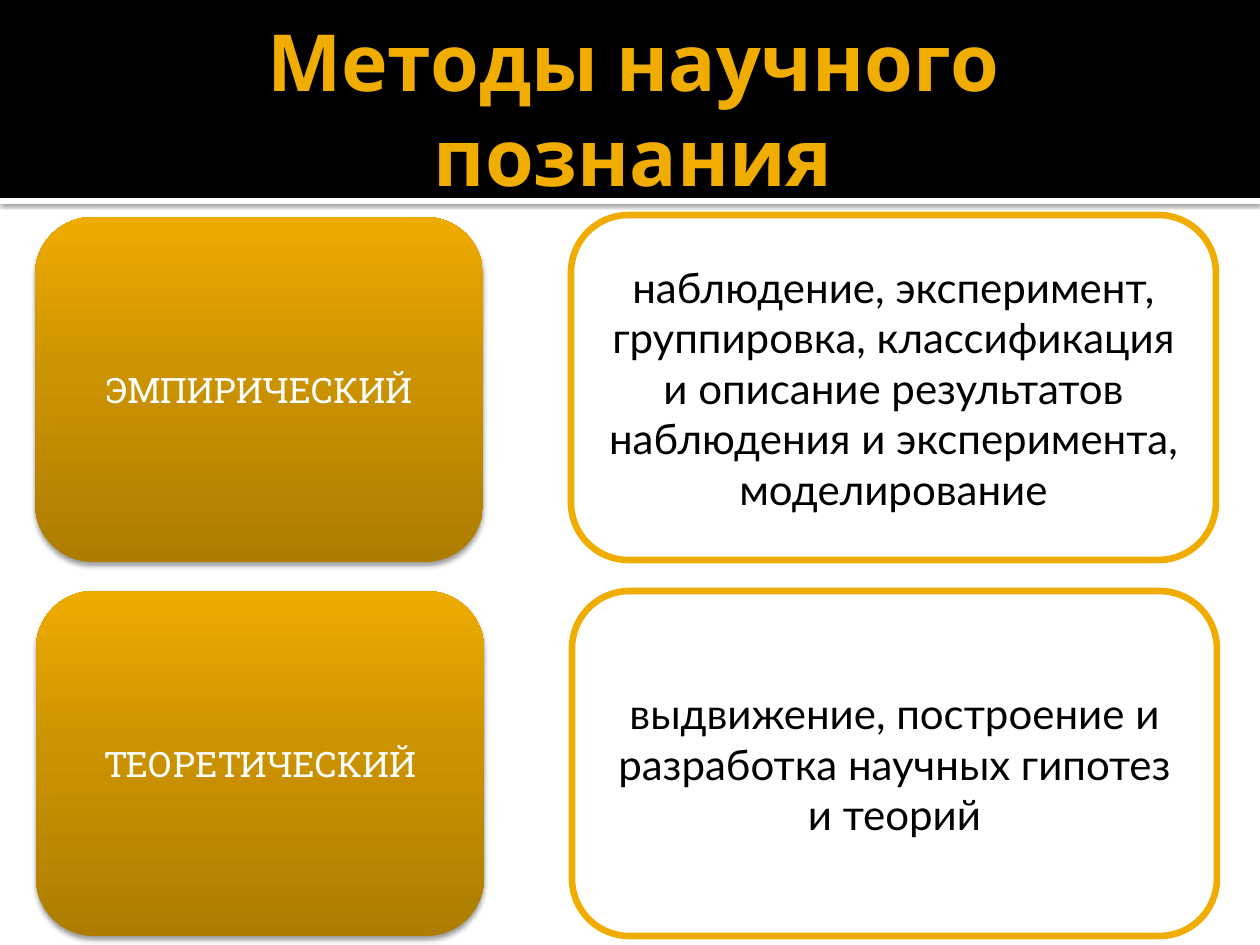
from typing import NamedTuple, Optional

from lxml import etree
from pptx import Presentation
from pptx.dml.color import RGBColor
from pptx.enum.shapes import MSO_SHAPE
from pptx.enum.text import MSO_ANCHOR, PP_ALIGN
from pptx.oxml.ns import qn
from pptx.util import Emu, Pt

RECT, ROUNDED = MSO_SHAPE.RECTANGLE, MSO_SHAPE.ROUNDED_RECTANGLE
MIDDLE, CENTER = MSO_ANCHOR.MIDDLE, PP_ALIGN.CENTER
EMU_PER_PX = 914400 / 126
GOLD, BLACK, WHITE = "F0AD00", "000000", "FFFFFF"
GOLD_STOPS = ((0, "AE7D00"), (55, "CC9300"), (100, "EEAB00"))


class Box(NamedTuple):
    x: int
    y: int
    w: int
    h: int


class Font(NamedTuple):
    name: str
    size: int
    color: str
    bold: bool = False


class Shadow(NamedTuple):
    alpha: int
    blur: float
    dist: float


class Level(NamedTuple):
    name: str
    methods: str
    name_box: Box
    methods_box: Box


TITLE_FONT = Font("Cabin", 45, GOLD, True)
NAME_FONT = Font("Roboto Slab", 20, WHITE)
METHODS_FONT = Font("Lato", 24, BLACK)
STRIP_SHADOW = Shadow(60, 2.5, 0.8)
CARD_SHADOW = Shadow(38, 3.1, 2)
LEVELS = (
    Level("ЭМПИРИЧЕСКИЙ",
          "наблюдение, эксперимент, группировка, классификация и описание "
          "результатов наблюдения и эксперимента, моделирование",
          Box(35, 217, 448, 345), Box(571, 215, 645, 345)),
    Level("ТЕОРЕТИЧЕСКИЙ",
          "выдвижение, построение и разработка научных гипотез и теорий",
          Box(36, 591, 448, 345), Box(572, 591, 645, 345)),
)


def px(n: int) -> Emu:
    return Emu(round(n * EMU_PER_PX))


def rgb(color: str) -> RGBColor:
    return RGBColor.from_string(color)


def add_color(parent, color: str):
    return etree.SubElement(parent, qn("a:srgbClr"), val=color)


def add_shape(slide, kind, box: Box, fill: str = WHITE, line: Optional[str] = None,
              shadow: Optional[Shadow] = None):
    s = slide.shapes.add_shape(kind, *map(px, box))
    s.fill.solid()
    s.fill.fore_color.rgb = rgb(fill)
    if line:
        s.line.color.rgb = rgb(line)
        s.line.width = Pt(3.78)
    else:
        s.line.fill.background()
    s.shadow.inherit = False
    if shadow:
        effects = s._element.spPr.find(qn("a:effectLst"))
        outer = etree.SubElement(effects, qn("a:outerShdw"), blurRad=str(Pt(shadow.blur)),
                                 dist=str(Pt(shadow.dist)), dir="5400000",
                                 algn="t", rotWithShape="0")
        etree.SubElement(add_color(outer, BLACK), qn("a:alpha"), val=str(shadow.alpha * 1000))
    return s


def set_gradient(s, stops) -> None:
    s.fill.gradient()
    s.fill.gradient_angle = 90
    gs_list = s._element.spPr.find(qn("a:gradFill")).find(qn("a:gsLst"))
    for gs in list(gs_list):
        gs_list.remove(gs)
    for pos, color in stops:
        add_color(etree.SubElement(gs_list, qn("a:gs"), pos=str(pos * 1000)), color)


def set_text(s, text: str, font: Font) -> None:
    tf = s.text_frame
    tf.word_wrap = True
    tf.vertical_anchor = MIDDLE
    p = tf.paragraphs[0]
    p.alignment = CENTER
    r = p.add_run()
    r.text = text
    for name, value in {"name": font.name, "size": Pt(font.size), "bold": font.bold}.items():
        setattr(r.font, name, value)
    r.font.color.rgb = rgb(font.color)


def add_title(slide, text: str) -> None:
    s = slide.shapes.add_textbox(*map(px, Box(63, 21, 1134, 173)))
    set_text(s, text, TITLE_FONT)
    s.text_frame.margin_right = px(6)


def add_level(slide, level: Level) -> None:
    s = add_shape(slide, ROUNDED, level.name_box, shadow=CARD_SHADOW)
    set_gradient(s, GOLD_STOPS)
    set_text(s, level.name, NAME_FONT)
    s = add_shape(slide, ROUNDED, level.methods_box, line=GOLD)
    set_text(s, level.methods, METHODS_FONT)


def main() -> None:
    """Build the slide on methods of scientific knowledge."""
    prs = Presentation()
    prs.slide_width, prs.slide_height = px(1260), px(945)
    slide = prs.slides.add_slide(prs.slide_layouts[6])
    add_shape(slide, RECT, Box(0, 198, 1260, 6), shadow=STRIP_SHADOW)
    add_shape(slide, RECT, Box(0, 0, 1260, 198), BLACK)
    add_title(slide, "Методы научного познания")
    for level in LEVELS:
        add_level(slide, level)
    prs.save("out.pptx")


if __name__ == "__main__":
    main()
